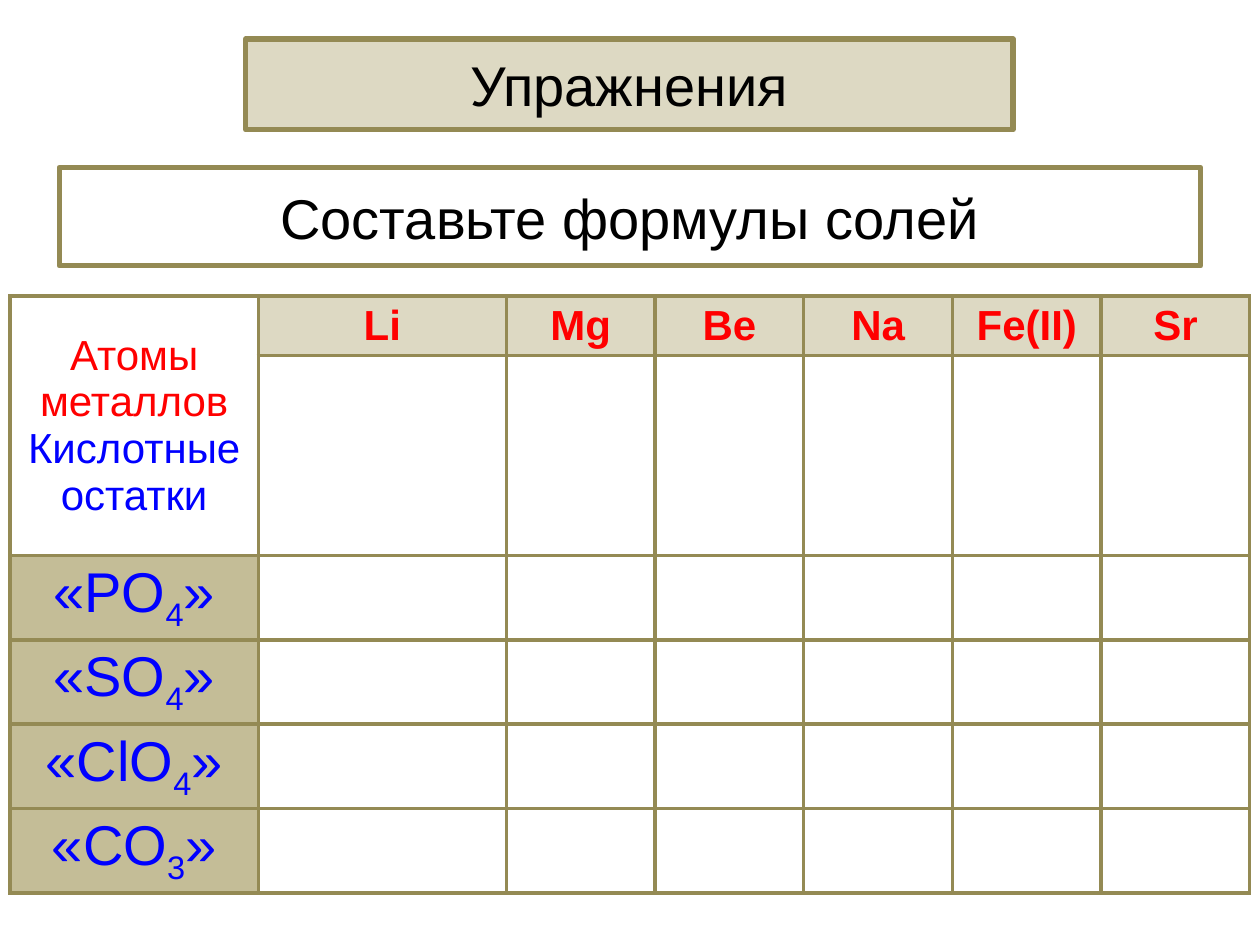
from lxml.etree import SubElement
from pptx import Presentation
from pptx.dml.color import RGBColor
from pptx.enum.shapes import MSO_SHAPE
from pptx.enum.text import MSO_ANCHOR, PP_ALIGN
from pptx.oxml.ns import qn
from pptx.util import Inches, Pt

BLACK = RGBColor(0x00, 0x00, 0x00)
RED = RGBColor(0xFF, 0x00, 0x00)
BLUE = RGBColor(0x00, 0x00, 0xFF)
OLIVE = RGBColor(0x94, 0x8A, 0x54)
LIGHT_TAN = RGBColor(0xDD, 0xD9, 0xC3)
TAN = RGBColor(0xC4, 0xBD, 0x97)

METALS = ["Li", "Mg", "Be", "Na", "Fe(II)", "Sr"]
RESIDUES = [("PO", "4"), ("SO", "4"), ("ClO", "4"), ("CO", "3")]
COLUMN_WIDTHS = [1.97] * 2 + [1.18] * 5
ROW_HEIGHTS = [0.41] * 2 + [0.55] * 4


def add_span(para, text, size, color, bold=False, baseline=0):
    para.alignment = PP_ALIGN.CENTER
    span = para.add_run()
    span.text = text
    span.font.name = "Arial"
    span.font.size = Pt(size)
    span.font.bold = bold
    span.font.color.rgb = color
    if baseline:
        span.font._element.set("baseline", str(baseline * 1000))


def set_fill(target, color):
    if color is None:
        target.fill.background()
    else:
        target.fill.solid()
        target.fill.fore_color.rgb = color


def add_banner(page, box, text, fill=None):
    banner = page.shapes.add_shape(MSO_SHAPE.ROUNDED_RECTANGLE, *map(Inches, box))
    banner.adjustments[0] = 0
    banner.shadow.inherit = False
    set_fill(banner, fill)
    banner.line.color.rgb = OLIVE
    banner.line.width = Pt(3)
    frame = banner.text_frame
    frame.word_wrap = True
    frame.vertical_anchor = MSO_ANCHOR.MIDDLE
    add_span(frame.paragraphs[0], text, 32, BLACK)


def add_borders(cell):
    properties = cell._tc.get_or_add_tcPr()
    for side in ("a:lnL", "a:lnR", "a:lnT", "a:lnB"):
        border = SubElement(properties, qn(side), w=str(Pt(2.25)))
        solid = SubElement(border, qn("a:solidFill"))
        SubElement(solid, qn("a:srgbClr"), val=str(OLIVE))


def add_salt_table(page, box):
    holder = page.shapes.add_table(
        len(ROW_HEIGHTS), len(COLUMN_WIDTHS), *map(Inches, box))
    table = holder.table
    table.first_row = False
    table.horz_banding = False
    for column, width in zip(table.columns, COLUMN_WIDTHS):
        column.width = Inches(width)
    for row, height in zip(table.rows, ROW_HEIGHTS):
        row.height = Inches(height)
    holder.height = Inches(box[3])
    for cell in table.iter_cells():
        add_borders(cell)
        set_fill(cell, None)

    corner = table.cell(0, 0)
    corner.merge(table.cell(1, 0))
    corner.vertical_anchor = MSO_ANCHOR.MIDDLE
    add_span(corner.text_frame.paragraphs[0], "Атомы металлов", 24, RED)
    add_span(corner.text_frame.add_paragraph(), "Кислотные остатки", 24, BLUE)

    for index, metal in enumerate(METALS, start=1):
        cell = table.cell(0, index)
        set_fill(cell, LIGHT_TAN)
        cell.vertical_anchor = MSO_ANCHOR.MIDDLE
        add_span(cell.text_frame.paragraphs[0], metal, 24, RED, bold=True)

    for index, (residue, count) in enumerate(RESIDUES, start=2):
        cell = table.cell(index, 0)
        set_fill(cell, TAN)
        para = cell.text_frame.paragraphs[0]
        add_span(para, "«" + residue, 32, BLUE)
        add_span(para, count, 32, BLUE, baseline=-25)
        add_span(para, "»", 32, BLUE)


def main():
    deck = Presentation()
    deck.slide_width = Inches(10)
    deck.slide_height = Inches(7.5)
    page = deck.slides.add_slide(deck.slide_layouts[6])
    add_banner(page, (1.95, 0.31, 6.09, 0.72), "Упражнения", LIGHT_TAN)
    add_salt_table(page, (0.08, 2.35, 9.84, 4.23))
    add_banner(page, (0.47, 1.33, 9.06, 0.78), "Составьте формулы солей")
    deck.save("out.pptx")


if __name__ == "__main__":
    main()
